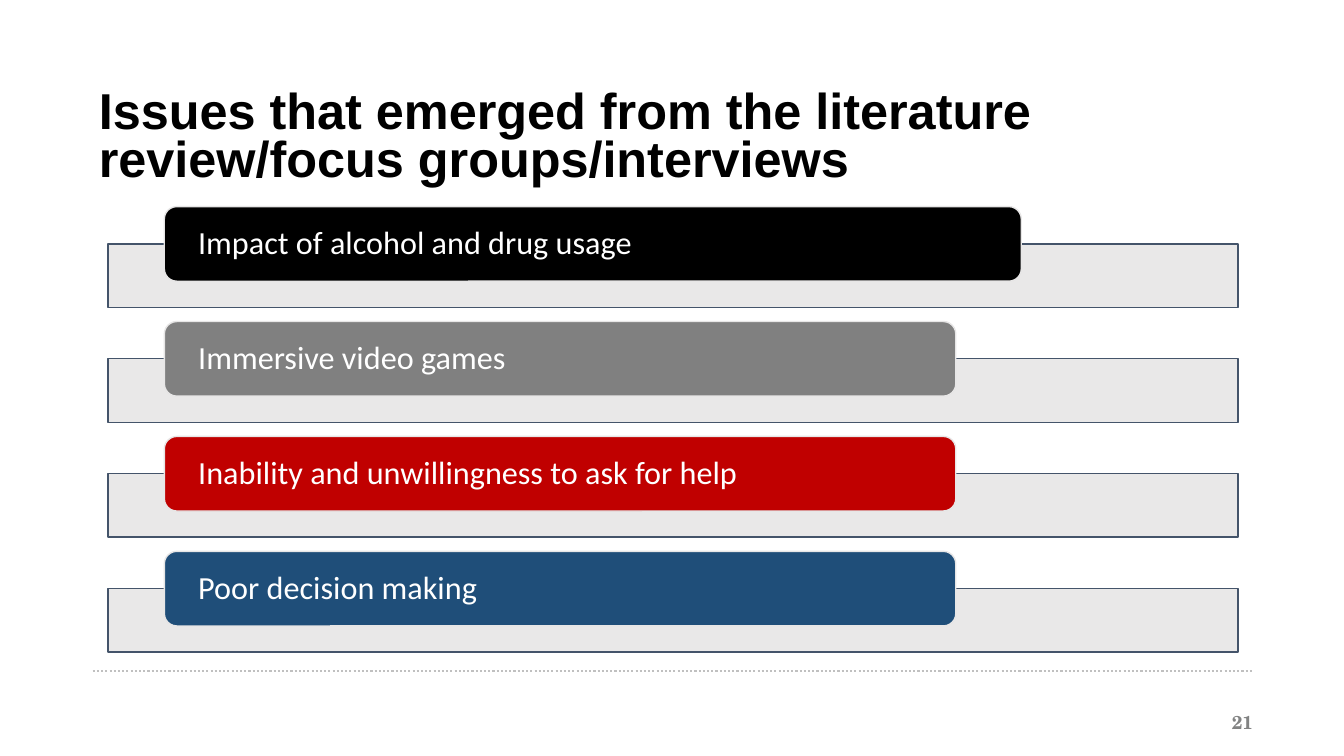
"""Build the slide listing issues found in the literature review, focus groups and interviews."""
import pptx
import pptx.util
import pptx.dml.color
import pptx.enum.dml
import pptx.enum.shapes
import pptx.enum.text
import pptx.oxml.ns
from lxml import etree

Inches, Pt = pptx.util.Inches, pptx.util.Pt
RGBColor = pptx.dml.color.RGBColor
ALIGN, ANCHOR = pptx.enum.text.PP_ALIGN, pptx.enum.text.MSO_ANCHOR
SHAPE = pptx.enum.shapes.MSO_SHAPE

BLACK = RGBColor(0x00, 0x00, 0x00)
WHITE = RGBColor(0xFF, 0xFF, 0xFF)
GREY = RGBColor(0x80, 0x80, 0x80)
RED = RGBColor(0xC0, 0x00, 0x00)
BLUE = RGBColor(0x1F, 0x4E, 0x79)
PALE = RGBColor(0xE7, 0xE6, 0xE6)
SLATE = RGBColor(0x44, 0x54, 0x6A)
RULE_GREY = RGBColor(0xC0, 0xC0, 0xC0)
NUMBER_GREY = RGBColor(0x82, 0x83, 0x83)

TITLE = "Issues that emerged from the literature review/focus groups/interviews"
PAGE_NUMBER = "21"
ISSUES = [
    ("Impact of alcohol and drug usage", BLACK, 8.5),
    ("Immersive video games", GREY, 7.85),
    ("Inability and unwillingness to ask for help", RED, 7.85),
    ("Poor decision making", BLUE, 7.85),
]
FIRST_TOP, ROW_STEP = 2.05, 1.14
LABEL_LEFT, LABEL_HEIGHT = 1.63, 0.74
BAR_LEFT, BAR_WIDTH, BAR_HEIGHT = 1.07, 11.21, 0.63


def write(holder, text, *, size, font, color, bold=False, align=ALIGN.LEFT,
          anchor=ANCHOR.MIDDLE, spacing=1.0, insets=(0.1, 0.05)):
    """Put one formatted paragraph in a shape."""
    frame = holder.text_frame
    frame.word_wrap = True
    frame.auto_size = pptx.enum.text.MSO_AUTO_SIZE.NONE
    frame.vertical_anchor = anchor
    frame.margin_left = frame.margin_right = Inches(insets[0])
    frame.margin_top = frame.margin_bottom = Inches(insets[1])
    paragraph = frame.paragraphs[0]
    paragraph.alignment = align
    paragraph.line_spacing = spacing
    run = paragraph.add_run()
    run.text = text
    run.font.size = Pt(size)
    run.font.name = font
    run.font.bold = bold
    run.font.color.rgb = color


def add_block(slide, kind, box, fill, outline):
    """Add a filled and outlined shape without shadow."""
    block = slide.shapes.add_shape(kind, *map(Inches, box))
    block.shadow.inherit = False
    block.fill.solid()
    block.fill.fore_color.rgb = fill
    block.line.color.rgb = outline
    block.line.width = Pt(1)
    return block


def add_issue(slide, row, text, color, width):
    """Add one issue label over its pale bar."""
    top = FIRST_TOP + row * ROW_STEP
    bar = add_block(slide, SHAPE.RECTANGLE,
                    (BAR_LEFT, top + LABEL_HEIGHT / 2, BAR_WIDTH, BAR_HEIGHT), PALE, SLATE)
    bar_color = bar.fill._xPr.find(".//" + pptx.oxml.ns.qn("a:srgbClr"))
    etree.SubElement(bar_color, pptx.oxml.ns.qn("a:alpha"), val="90000")
    label = add_block(slide, SHAPE.ROUNDED_RECTANGLE,
                      (LABEL_LEFT, top, width, LABEL_HEIGHT), color, PALE)
    write(label, text, size=23, font="Calibri", color=WHITE, spacing=0.9, insets=(0.3, 0))


def main():
    """Lay out the slide and save it."""
    deck = pptx.Presentation()
    deck.slide_width, deck.slide_height = Inches(13.33), Inches(7.5)
    slide = deck.slides.add_slide(deck.slide_layouts[5])

    title = slide.shapes.title
    title.left, title.top, title.width, title.height = map(Inches, (0.88, 0.85, 11.49, 0.77))
    write(title, TITLE, size=36, font="Arial", color=BLACK, bold=True,
          anchor=ANCHOR.TOP, spacing=0.8)

    rule = slide.shapes.add_connector(pptx.enum.shapes.MSO_CONNECTOR.STRAIGHT,
                                      *map(Inches, (0.92, 6.66, 12.42, 6.66)))
    rule.line.color.rgb = RULE_GREY
    rule.line.width = Pt(1.5)
    rule.line.dash_style = pptx.enum.dml.MSO_LINE.ROUND_DOT
    etree.SubElement(rule._element.spPr, pptx.oxml.ns.qn("a:effectLst"))

    number = slide.shapes.add_textbox(*map(Inches, (9.56, 6.96, 3, 0.4)))
    write(number, PAGE_NUMBER, size=13.3, font="TeX Gyre Schola", color=NUMBER_GREY,
          bold=True, align=ALIGN.RIGHT, insets=(0.13, 0.07))

    for row, issue in enumerate(ISSUES):
        add_issue(slide, row, *issue)

    deck.save("out.pptx")


if __name__ == "__main__":
    main()
